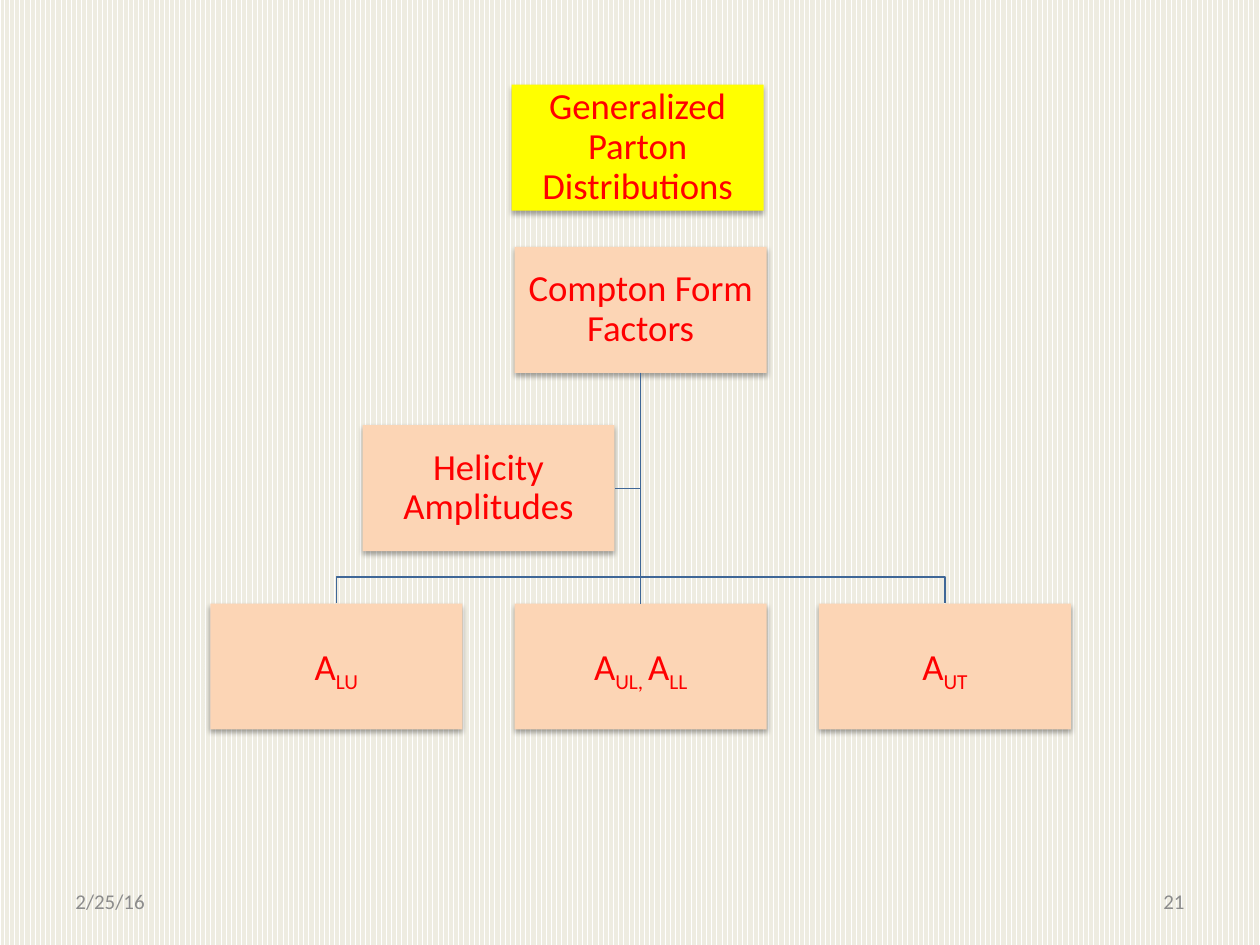
from lxml import etree
from pptx import Presentation, util as u
from pptx.dml.color import RGBColor
from pptx.enum import dml, shapes, text
from pptx.oxml import parse_xml
from pptx.oxml.ns import nsdecls, qn

COLOURS = {
    "stripe": "EEECE1",
    "paper": "FFFFFF",
    "peach": "FCD5B5",
    "yellow": "FFFF00",
    "label": "FF0000",
    "footer": "8C8C8C",
    "line": "3F6797",
}
WIDTH, HEIGHT = 10, 7.5
BOX_WIDTH, BOX_HEIGHT = 2, 1
LEFT, TOP = 1.67, 1.96
COLUMN_STEP = (6.5 - LEFT) / 2
ROW_STEP = (4.79 - TOP) / 2
FOOTER_MARGIN, FOOTER_WIDTH = 0.05, 7 / 30
SHADOW = (
    f'<a:effectLst {nsdecls("a")}><a:outerShdw blurRad="{u.Pt(3.1)}" '
    f'dist="{u.Pt(1.8)}" dir="5400000" rotWithShape="0"><a:srgbClr val="000000">'
    '<a:alpha val="35000"/></a:srgbClr></a:outerShdw></a:effectLst>'
)


def colour(name):
    return RGBColor.from_string(COLOURS[name])


def paint_background(page):
    fill = page.background.fill
    fill.patterned()
    fill.pattern = dml.MSO_PATTERN.DARK_VERTICAL
    fill.fore_color.rgb = colour("stripe")
    fill.back_color.rgb = colour("paper")


def write_text(frame, words, *, size, ink, align, spacing=1.0):
    frame.word_wrap = True
    frame.vertical_anchor = text.MSO_ANCHOR.MIDDLE
    para = frame.paragraphs[0]
    para.alignment = align
    para.line_spacing = spacing
    for index, part in enumerate(words.split("|")):
        span = para.add_run()
        span.text = part
        span.font.name = "Calibri"
        span.font.size = u.Pt(size)
        span.font.color.rgb = colour(ink)
        if index % 2:
            span.font._element.set("baseline", "-25000")


def add_box(page, column, row, words, fill="peach"):
    box = page.shapes.add_shape(
        shapes.MSO_SHAPE.RECTANGLE,
        u.Inches(LEFT + column * COLUMN_STEP), u.Inches(TOP + row * ROW_STEP),
        u.Inches(BOX_WIDTH), u.Inches(BOX_HEIGHT),
    )
    box.fill.solid()
    box.fill.fore_color.rgb = colour(fill)
    box.line.fill.background()
    box.shadow.inherit = False
    properties = box._element.spPr
    properties.replace(properties.find(qn("a:effectLst")), parse_xml(SHADOW))
    frame = box.text_frame
    frame.margin_left = frame.margin_right = u.Inches(0.01)
    frame.margin_top = frame.margin_bottom = u.Inches(0.01)
    write_text(frame, words, size=21, ink="label",
               align=text.PP_ALIGN.CENTER, spacing=0.9)
    return box


def style_line(line):
    line.color.rgb = colour("line")
    line.width = u.Pt(0.75)


def add_trunk(page, upper, lower):
    trunk = page.shapes.add_connector(shapes.MSO_CONNECTOR.STRAIGHT, 0, 0, 0, 0)
    trunk.begin_connect(upper, 2)
    trunk.end_connect(lower, 0)
    style_line(trunk.line)
    etree.SubElement(trunk._element.spPr, qn("a:effectLst"))


def add_branch(page, start, *points):
    builder = page.shapes.build_freeform(*start)
    builder.add_line_segments(points, close=False)
    branch = builder.convert_to_shape()
    branch.fill.background()
    branch.shadow.inherit = False
    style_line(branch.line)


def top_middle(box):
    return box.left + box.width // 2, box.top


def add_footer(page, left, words, align):
    box = page.shapes.add_textbox(
        u.Inches(left * WIDTH), u.Inches(6.95),
        u.Inches(FOOTER_WIDTH * WIDTH), u.Inches(0.4),
    )
    write_text(box.text_frame, words, size=12, ink="footer", align=align)


def connect_tree(page, root, assistant, leaves):
    centre, root_top = top_middle(root)
    start = centre, root_top + root.height
    side = assistant.top + assistant.height // 2
    add_branch(page, start, (centre, side),
               (assistant.left + assistant.width, side))
    add_trunk(page, root, leaves[1])
    for leaf in (leaves[0], leaves[-1]):
        end = top_middle(leaf)
        bus = end[1] - u.Inches(0.21)
        add_branch(page, start, (centre, bus), (end[0], bus), end)


def main():
    deck = Presentation()
    deck.slide_width, deck.slide_height = u.Inches(WIDTH), u.Inches(HEIGHT)
    page = deck.slides.add_slide(deck.slide_layouts[6])
    paint_background(page)
    add_footer(page, FOOTER_MARGIN, "2/25/16", text.PP_ALIGN.LEFT)
    add_footer(page, 1 - FOOTER_MARGIN - FOOTER_WIDTH, "21", text.PP_ALIGN.RIGHT)
    root = add_box(page, 1, 0, "Compton Form Factors")
    leaves = [
        add_box(page, column, 2, words)
        for column, words in enumerate(["A|LU", "A|UL, |A|LL", "A|UT"])
    ]
    assistant = add_box(page, 0.5, 1, "Helicity Amplitudes")
    add_box(page, 0.99, -0.91, "Generalized Parton Distributions", "yellow")
    connect_tree(page, root, assistant, leaves)
    deck.save("out.pptx")


if __name__ == "__main__":
    main()
